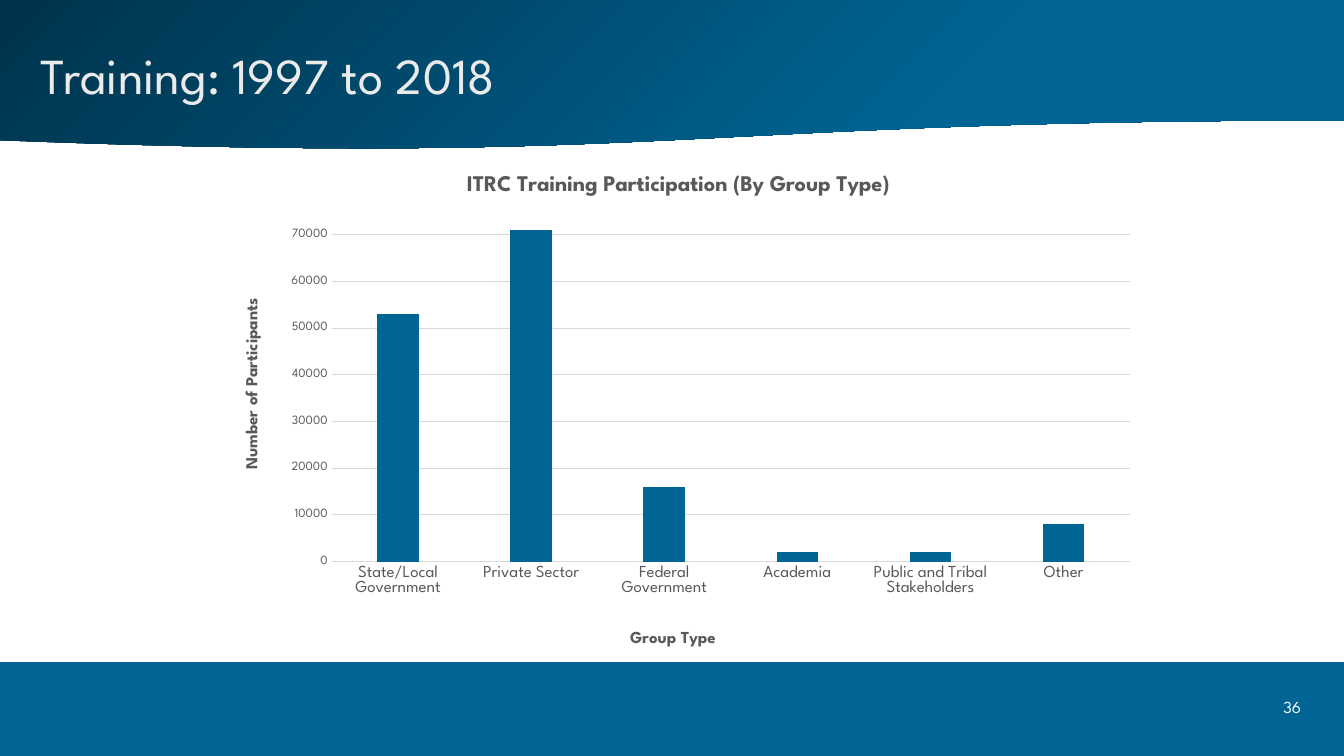
"""Build the slide on training numbers by group type."""
from dataclasses import dataclass

import lxml.etree
import pptx
import pptx.chart.data
import pptx.dml.color
import pptx.enum.chart
import pptx.enum.shapes
import pptx.enum.text
import pptx.oxml.ns
import pptx.util

Pt = pptx.util.Pt
FONT = "League Spartan"
WIDE, HIGH = 960, 540
TINTS = {
    "navy": "00334C",
    "blue": "006595",
    "pale": "EBEBEB",
    "white": "FFFFFF",
    "gray": "595959",
    "grid": "D9D9D9",
}
COUNTS = {
    "State/Local Government": 53000,
    "Private Sector": 71000,
    "Federal Government": 16000,
    "Academia": 2000,
    "Public and Tribal Stakeholders": 2000,
    "Other": 8000,
}


@dataclass
class Box:
    left: float
    top: float
    width: float
    height: float

    def points(self) -> tuple:
        return Pt(self.left), Pt(self.top), Pt(self.width), Pt(self.height)


@dataclass
class Label:
    text: str
    box: Box
    size: float
    tint: str
    align: pptx.enum.text.PP_ALIGN
    anchor: pptx.enum.text.MSO_ANCHOR


@dataclass
class Head:
    text: str
    size: float
    x: float
    y: float


LABELS = [
    Label("Training: 1997 to 2018", Box(21.6, 25.2, 690, 55.4), 36, "pale",
          pptx.enum.text.PP_ALIGN.LEFT, pptx.enum.text.MSO_ANCHOR.MIDDLE),
    Label("36", Box(904.3, 493.9, 37.4, 31.7), 12, "white",
          pptx.enum.text.PP_ALIGN.CENTER, pptx.enum.text.MSO_ANCHOR.TOP),
]


def shade(name: str) -> pptx.dml.color.RGBColor:
    return pptx.dml.color.RGBColor.from_string(TINTS[name])


def style(font, size: float, tint: str, bold: bool = False) -> None:
    font.name = FONT
    font.size = Pt(size)
    font.bold = bold
    font.color.rgb = shade(tint)


def add_band(slide, kind, box: Box):
    band = slide.shapes.add_shape(kind, *box.points())
    band.shadow.inherit = False
    band.line.fill.background()
    band.fill.solid()
    band.fill.fore_color.rgb = shade("blue")
    return band


def add_wave(slide) -> None:
    kind = pptx.enum.shapes.MSO_SHAPE.FLOWCHART_DOCUMENT
    fill = add_band(slide, kind, Box(0, 0, WIDE, 107.3)).fill
    fill.gradient()
    fill.gradient_angle = 315
    for stop, (place, tint) in zip(fill.gradient_stops, [(0, "navy"), (0.71, "blue")]):
        stop.position = place
        stop.color.rgb = shade(tint)


def add_label(slide, label: Label) -> None:
    frame = slide.shapes.add_textbox(*label.box.points()).text_frame
    frame.word_wrap = True
    frame.vertical_anchor = label.anchor
    line = frame.paragraphs[0]
    line.alignment = label.align
    run = line.add_run()
    run.text = label.text
    style(run.font, label.size, label.tint)


def place(node, **parts) -> None:
    """Give a chart node a fixed layout."""
    tag = pptx.oxml.ns.qn
    for old in node.findall(tag("c:layout")):
        node.remove(old)
    layout = lxml.etree.Element(tag("c:layout"))
    manual = lxml.etree.SubElement(layout, tag("c:manualLayout"))
    for key, value in parts.items():
        lxml.etree.SubElement(manual, tag("c:" + key)).set("val", str(value))
    node.insert(0 if node.find(tag("c:tx")) is None else 1, layout)


def add_head(title, head: Head) -> None:
    run = title.text_frame.paragraphs[0].add_run()
    run.text = head.text
    style(run.font, head.size, "gray", True)
    place(title.element if hasattr(title, "element") else title._element,
          xMode="edge", yMode="edge", x=head.x, y=head.y)


def set_axis(axis, size: float, head: Head) -> None:
    axis.major_tick_mark = pptx.enum.chart.XL_TICK_MARK.NONE
    axis.minor_tick_mark = pptx.enum.chart.XL_TICK_MARK.NONE
    style(axis.tick_labels.font, size, "gray")
    add_head(axis.axis_title, head)


def set_line(line) -> None:
    line.color.rgb = shade("grid")
    line.width = Pt(0.75)


def add_bars(slide) -> None:
    data = pptx.chart.data.CategoryChartData(number_format="General")
    data.categories = list(COUNTS)
    data.add_series("Series 1", list(COUNTS.values()))
    kind = pptx.enum.chart.XL_CHART_TYPE.COLUMN_CLUSTERED
    box = Box(137.5, 110.2, 689.8, 359.3)
    chart = slide.shapes.add_chart(kind, *box.points(), data).chart
    chart.font.name = FONT
    chart.font.size = Pt(10)
    chart.has_legend = False
    add_head(chart.chart_title,
             Head("ITRC Training Participation (By Group Type)", 16, 0.28, 0.03))

    groups, scale = chart.category_axis, chart.value_axis
    set_axis(groups, 12, Head("Group Type", 12, 0.45, 0.94))
    set_line(groups.format.line)
    set_axis(scale, 9, Head("Number of Participants", 12, 0.05, 0.28))
    scale.format.line.fill.background()
    scale.minimum_scale, scale.maximum_scale = 0, 75000
    scale.major_unit = 10000
    set_line(scale.major_gridlines.format.line)

    plot = chart.plots[0]
    plot.vary_by_categories = False
    plot.gap_width, plot.overlap = 219, -27
    fill = plot.series[0].format.fill
    fill.solid()
    fill.fore_color.rgb = shade("blue")
    place(plot._element.getparent(), layoutTarget="inner", xMode="edge",
          yMode="edge", x=0.144, y=0.114, w=0.827, h=0.696)


def main() -> None:
    deck = pptx.Presentation()
    deck.slide_width, deck.slide_height = Pt(WIDE), Pt(HIGH)
    slide = deck.slides.add_slide(deck.slide_layouts[6])
    add_wave(slide)
    add_band(slide, pptx.enum.shapes.MSO_SHAPE.RECTANGLE, Box(0, 473, WIDE, 67))
    for label in LABELS:
        add_label(slide, label)
    add_bars(slide)
    deck.save("out.pptx")


if __name__ == "__main__":
    main()
